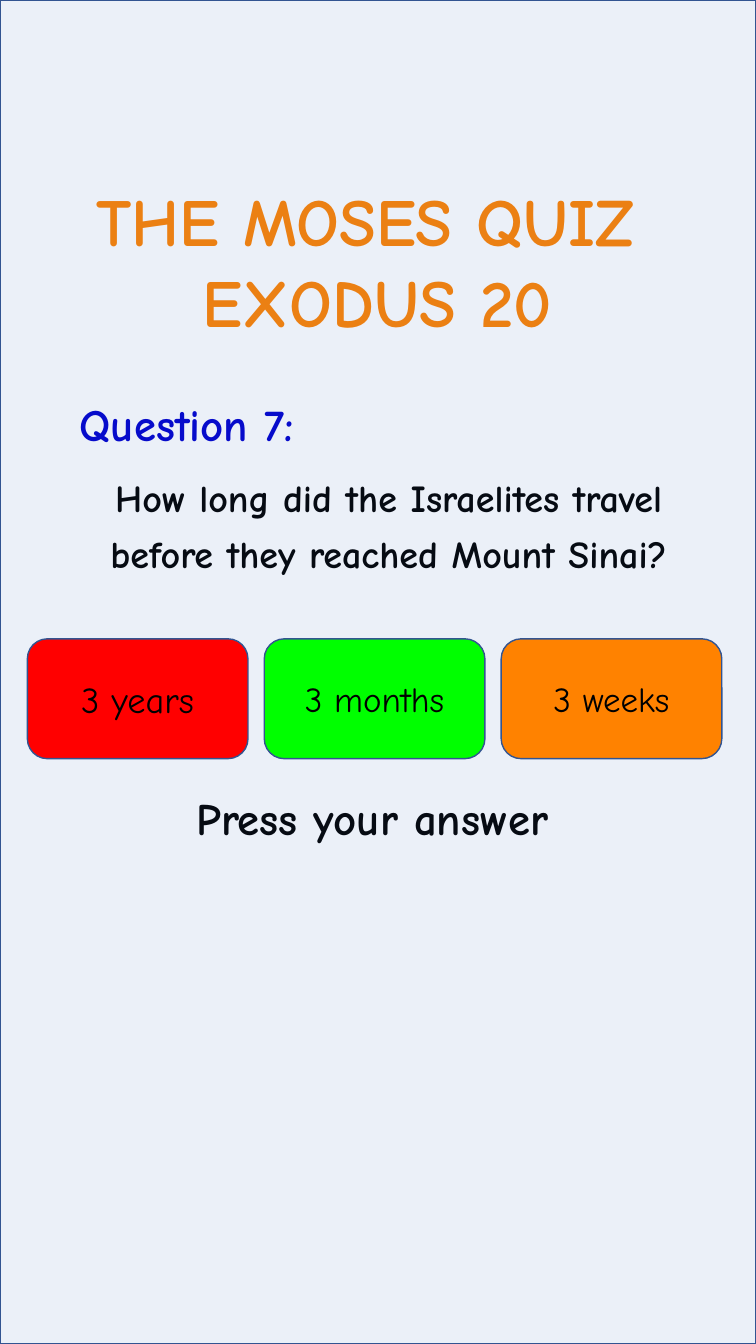
from dataclasses import dataclass

import pptx
from lxml import etree
from pptx.dml.color import RGBColor
from pptx.enum.shapes import MSO_SHAPE
from pptx.enum.text import MSO_ANCHOR, MSO_AUTO_SIZE, PP_ALIGN
from pptx.oxml.ns import qn
from pptx.util import Cm, Pt


@dataclass(frozen=True)
class Theme:
    font: str = "Comic Neue"
    black: str = "000000"
    blue: str = "0000CC"
    orange: str = "FF8200"
    red: str = "FF0000"
    green: str = "00FF00"
    veil: str = "4472C4"
    outline: str = "325491"
    title: float = 48
    heading: float = 32
    question: float = 27.2
    answer: float = 26
    small_answer: float = 25


theme = Theme()


def set_text(frame, text, size, color, bold=True, align=PP_ALIGN.CENTER,
             wrap=True, anchor=MSO_ANCHOR.TOP, line_spacing=1.0, before=0):
    """Fill the frame with text and give all its paragraphs one format."""
    frame.text = text
    frame.word_wrap = wrap
    frame.auto_size = MSO_AUTO_SIZE.NONE if wrap else MSO_AUTO_SIZE.SHAPE_TO_FIT_TEXT
    frame.vertical_anchor = anchor
    for paragraph in frame.paragraphs:
        paragraph.alignment = align
        paragraph.line_spacing = line_spacing
        paragraph.space_before = Pt(before)
        paragraph.font.name = theme.font
        paragraph.font.size = Pt(size)
        paragraph.font.bold = bold
        paragraph.font.color.rgb = RGBColor.from_string(color)


def add_panel(preset, left, top, width, height, color):
    """Add a filled shape with the common thin outline."""
    panel = slide.shapes.add_shape(preset, left, top, width, height)
    panel.shadow.inherit = False
    panel.fill.solid()
    panel.fill.fore_color.rgb = RGBColor.from_string(color)
    panel.line.color.rgb = RGBColor.from_string(theme.outline)
    panel.line.width = Pt(1)
    return panel


presentation = pptx.Presentation()
presentation.slide_width = Cm(19.05)
presentation.slide_height = Cm(33.87)
slide = presentation.slides.add_slide(presentation.slide_layouts[5])

title = slide.shapes.title
title.left, title.top, title.width, title.height = Cm(0.76), Cm(4.39), Cm(17.5), Cm(4.37)
set_text(title.text_frame, "THE MOSES QUIZ \nEXODUS 20", theme.title, theme.orange, wrap=False)

question_number = slide.shapes.add_textbox(Cm(1.19), Cm(9.88), Cm(7.04), Cm(1.63))
set_text(question_number.text_frame, "Question 7:", theme.heading, theme.blue, wrap=False)

question = slide.shapes.add_textbox(Cm(1.42), Cm(11.58), Cm(16.76), Cm(3.71))
set_text(question.text_frame,
         "How long did the Israelites travel before they reached Mount Sinai?",
         theme.question, theme.black, line_spacing=Pt(40), before=7.5)

instruction = slide.shapes.add_textbox(Cm(4.7), Cm(19.96), Cm(10.72), Cm(1.83))
set_text(instruction.text_frame, "Press your answer", theme.heading, theme.black,
         align=PP_ALIGN.LEFT, line_spacing=0.9, before=7.5)

veil = add_panel(MSO_SHAPE.RECTANGLE, 0, 0, presentation.slide_width,
                 presentation.slide_height, theme.veil)
veil_color = veil.fill._xPr.find(qn("a:solidFill")).find(qn("a:srgbClr"))
etree.SubElement(veil_color, qn("a:alpha"), val="10000")

answers = [
    ("3 years", theme.red, theme.answer),
    ("3 months", theme.green, theme.small_answer),
    ("3 weeks", theme.orange, theme.small_answer),
]
for column, (answer, color, size) in enumerate(answers):
    button = add_panel(MSO_SHAPE.ROUNDED_RECTANGLE, Cm(0.69 + 5.97 * column), Cm(16.1),
                       Cm(5.56), Cm(3.02), color)
    set_text(button.text_frame, answer, size, theme.black, bold=False,
             anchor=MSO_ANCHOR.MIDDLE)

presentation.save("out.pptx")
